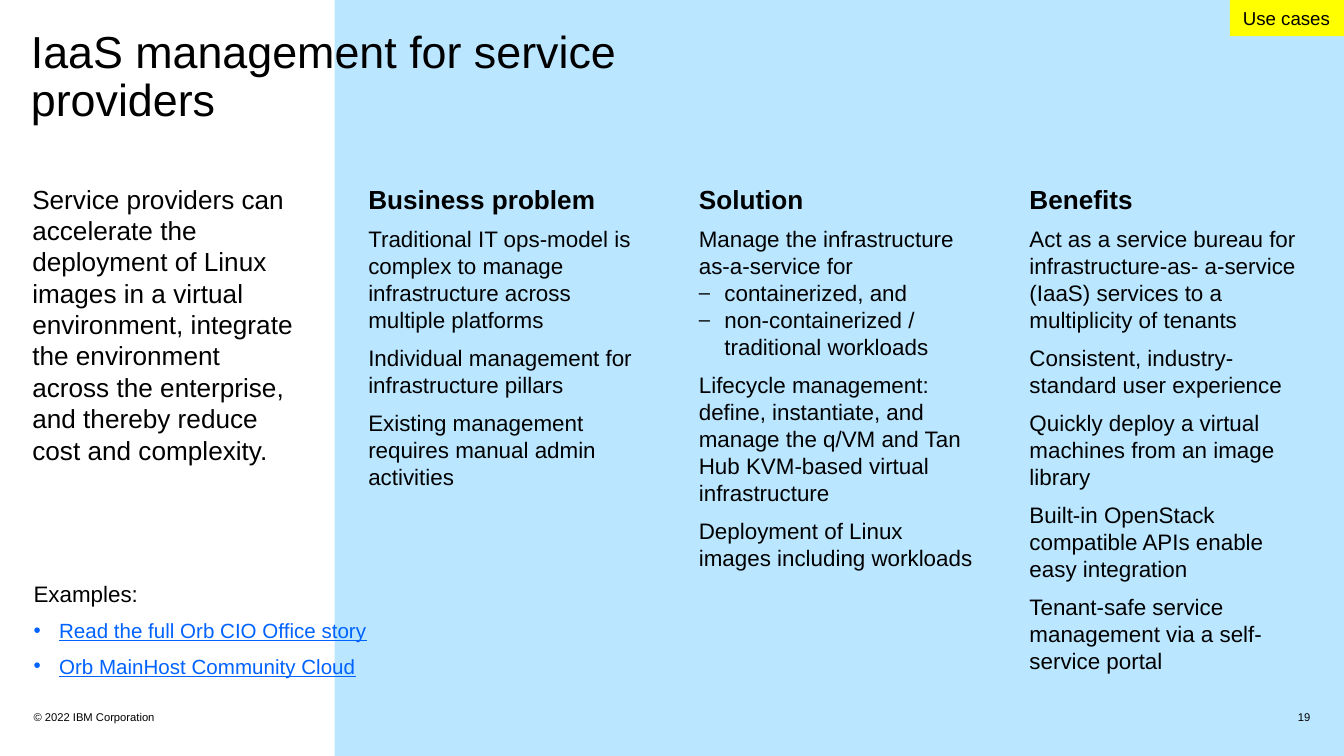
"""Build a use-case slide with an intro, three columns and examples."""
from dataclasses import dataclass, field
from typing import Any

from lxml import etree
from pptx import Presentation
from pptx import util as u
from pptx.dml.color import RGBColor
from pptx.enum import shapes, text
from pptx.oxml.ns import qn

BLACK = RGBColor(0, 0, 0)
WHITE = RGBColor(255, 255, 255)
SKY = RGBColor(0xBA, 0xE6, 0xFF)
YELLOW = RGBColor(255, 255, 0)
BLUE = RGBColor(0, 0x62, 0xFF)
WIDE, HIGH = u.Pt(720), u.Pt(405)
TOP, DEEP, COL, STEP = 24.2, 63.3, 20.5, 24.6
SIDES = ("left", "top", "width", "height")
FRAME = {"margin_left": 0, "margin_right": 0, "margin_top": 0,
         "margin_bottom": 0, "word_wrap": True,
         "auto_size": text.MSO_AUTO_SIZE.NONE,
         "vertical_anchor": text.MSO_ANCHOR.TOP}
MIDDLE = {"vertical_anchor": text.MSO_ANCHOR.MIDDLE}


@dataclass
class Line:
    """One paragraph and its format."""
    words: str
    size: float = 12
    gap: float = 6
    bold: bool = False
    mark: str = ""
    level: int = 0
    color: RGBColor = BLACK
    under: bool = False
    lead: float = 1.0
    align: Any = text.PP_ALIGN.LEFT


@dataclass
class Block:
    """A text area in percent of the slide, with its paragraphs."""
    area: tuple[float, float, float, float]
    lines: list[Line]
    frame: dict[str, Any] = field(default_factory=dict)


def apply(item: Any, values: dict[str, Any]) -> None:
    """Set each named value on an object."""
    for name, value in values.items():
        setattr(item, name, value)


def scale(area: tuple[float, float, float, float]) -> list[int]:
    """Turn percent shares into slide lengths."""
    return [round(part * side / 100)
            for part, side in zip(area, (WIDE, HIGH, WIDE, HIGH))]


def bullet(para: Any, mark: str) -> None:
    """Set or clear the bullet and its hanging indent."""
    props = para._p.get_or_add_pPr()
    hang = u.Inches(0.19) if mark else 0
    props.set("marL", str(hang))
    props.set("indent", str(-hang))
    if mark == "‒":
        etree.SubElement(props, qn("a:buSzPct")).set("val", "90000")
    if mark:
        etree.SubElement(props, qn("a:buFont")).set("typeface", "Arial")
        etree.SubElement(props, qn("a:buChar")).set("char", mark)
    else:
        etree.SubElement(props, qn("a:buNone"))


def fill(shape: Any, lines: list[Line], frame: dict[str, Any]) -> None:
    """Write formatted paragraphs into a shape."""
    body = shape.text_frame
    apply(body, FRAME | frame)
    for spot, line in enumerate(lines):
        para = body.add_paragraph() if spot else body.paragraphs[0]
        bullet(para, line.mark)
        apply(para, {"level": line.level, "alignment": line.align,
                     "line_spacing": line.lead, "space_after": u.Pt(0),
                     "space_before": u.Pt(line.gap if spot else 0)})
        run = para.add_run()
        run.text = line.words
        apply(run.font, {"name": "Arial", "size": u.Pt(line.size),
                         "bold": line.bold, "underline": line.under})
        run.font.color.rgb = line.color


def place(shape: Any, block: Block) -> None:
    """Move a placeholder to its area and fill it."""
    apply(shape, dict(zip(SIDES, scale(block.area))))
    fill(shape, block.lines, block.frame)


def panel(slide: Any, area: tuple[float, float, float, float],
          color: RGBColor) -> Any:
    """Draw a plain rectangle."""
    shape = slide.shapes.add_shape(shapes.MSO_SHAPE.RECTANGLE, *scale(area))
    shape.shadow.inherit = False
    shape.fill.solid()
    shape.fill.fore_color.rgb = color
    shape.line.fill.background()
    return shape


def column(spot: int, head: str, items: list[str]) -> Block:
    """Make a headed column, where a leading dash marks a sub-item."""
    lines = [Line(head, size=14, bold=True)]
    for item in items:
        dash = item.startswith("‒")
        lines.append(Line(item.lstrip("‒"), gap=0 if dash else 6,
                          mark="‒" if dash else "", level=int(dash)))
    return Block((27.4 + spot * STEP, TOP, COL, DEEP), lines)


TITLE = Block((2.3, 3.9, 45.3, 15.7), [
    Line("IaaS management for service providers", size=24, lead=0.9)])
INTRO = Block((2.4, TOP, 20.1, DEEP), [Line(
    "Service providers can accelerate the deployment of Linux images in a "
    "virtual environment, integrate the environment across the enterprise, "
    "and thereby reduce cost and complexity.", size=14)])
COLUMNS = [
    ("Business problem", [
        "Traditional IT ops-model is complex to manage infrastructure across "
        "multiple platforms",
        "Individual management for infrastructure pillars",
        "Existing management requires manual admin activities"]),
    ("Solution", [
        "Manage the infrastructure as-a-service for",
        "‒containerized, and",
        "‒non-containerized / traditional workloads",
        "Lifecycle management: define, instantiate, and manage the q/VM and "
        "Tan Hub KVM-based virtual infrastructure",
        "Deployment of Linux images including workloads"]),
    ("Benefits", [
        "Act as a service bureau for infrastructure-as- a-service (IaaS) "
        "services to a multiplicity of tenants",
        "Consistent, industry-standard user experience",
        "Quickly deploy a virtual machines from an image library",
        "Built-in OpenStack compatible APIs enable easy integration",
        "Tenant-safe service management via a self-service portal"]),
]
LINKS = ["Read the full Orb CIO Office story", "Orb MainHost Community Cloud"]
NOTES = [
    Block((2.5, 93.2, 45, 3.2),
          [Line("© 2022 IBM Corporation", size=6)], MIDDLE),
    Block((77.5, 93.2, 20, 3.2),
          [Line("19", size=6, align=text.PP_ALIGN.RIGHT)], MIDDLE),
    Block((2.5, 75.8, 28, 14.9),
          [Line("Examples:")] + [
              Line(link, size=11, mark="•", color=BLUE, under=True)
              for link in LINKS],
          {"margin_top": u.Inches(0.05), "margin_bottom": u.Inches(0.05)}),
]


def main() -> None:
    """Build and save the slide."""
    deck = Presentation()
    apply(deck, {"slide_width": WIDE, "slide_height": HIGH})
    slide = deck.slides.add_slide(deck.slide_layouts[4])
    slide.background.fill.solid()
    slide.background.fill.fore_color.rgb = SKY
    back = panel(slide, (-0.1, 0, 25, 100), WHITE)
    slide.shapes._spTree.insert(2, back._element)
    blocks = [TITLE, INTRO] + [
        column(spot, *part) for spot, part in enumerate(COLUMNS)]
    for holder, block in zip(slide.placeholders, blocks):
        place(holder, block)
    for note in NOTES:
        box = slide.shapes.add_textbox(*scale(note.area))
        fill(box, note.lines, note.frame)
    tag = panel(slide, (91.5, 0, 8.5, 4.8), YELLOW)
    fill(tag, [Line("Use cases", size=10)],
         MIDDLE | {"margin_left": u.Inches(0.1),
                   "margin_right": u.Inches(0.1), "word_wrap": False})
    deck.save("out.pptx")


if __name__ == "__main__":
    main()
